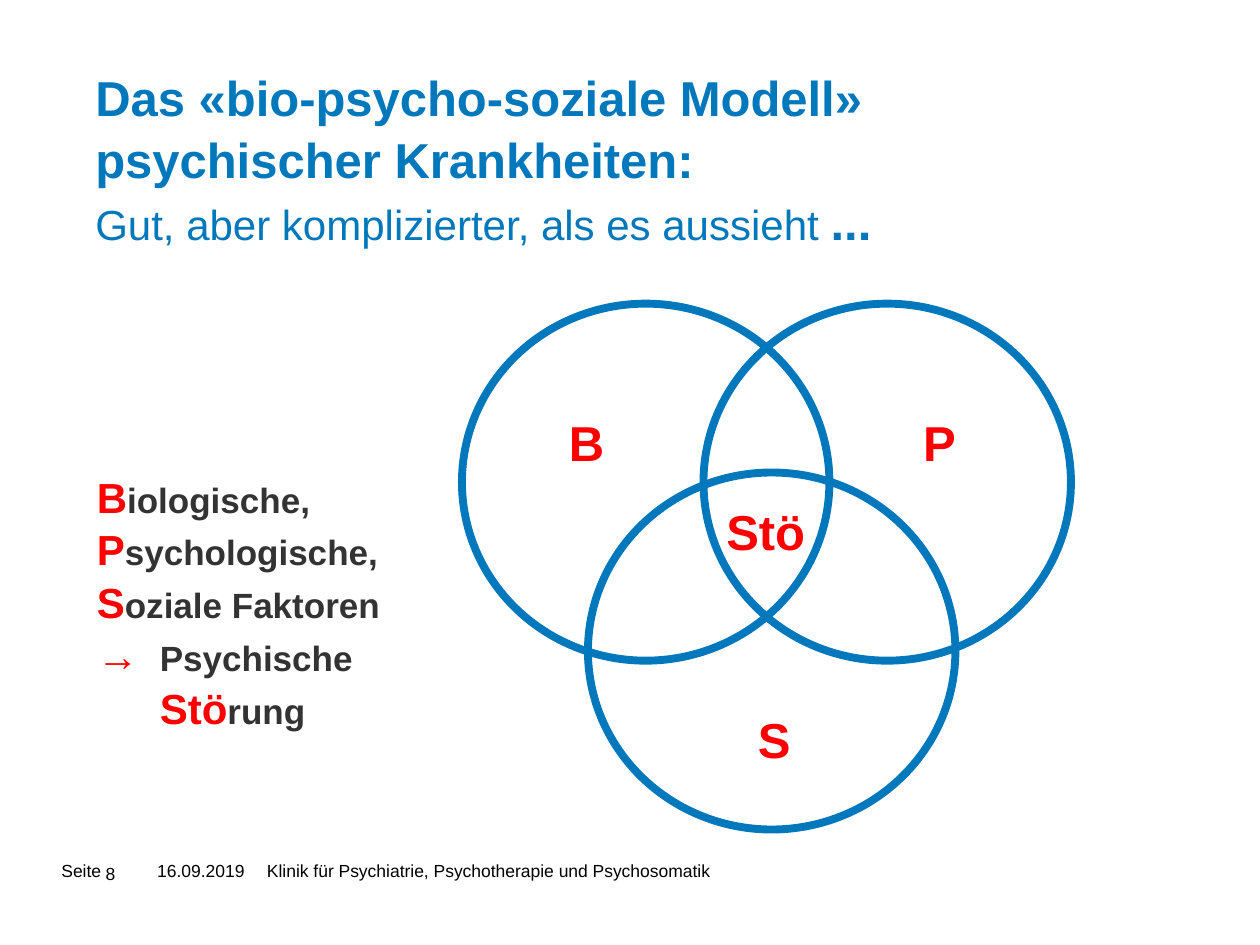
"""Build the slide on the bio-psycho-social model with its three overlapping circles."""
from pptx import Presentation
from pptx.dml.color import RGBColor
from pptx.enum.shapes import MSO_SHAPE
from pptx.enum.text import MSO_ANCHOR, PP_ALIGN
from pptx.util import Pt

OVAL = MSO_SHAPE.OVAL
MIDDLE = MSO_ANCHOR.MIDDLE
LEFT = PP_ALIGN.LEFT
BLUE, RED, GREY, BLACK = "0078BB", "FF0000", "333333", "000000"
LINE_SPACING = 1.05


def add_span(para, text, size=10, color=BLACK, bold=False):
    span = para.add_run()
    span.text = text
    span.font.name = "Arial"
    span.font.size = Pt(size)
    span.font.bold = bold
    span.font.color.rgb = RGBColor.from_string(color)


def add_box(left, top, width, height, wrap=True):
    box = page.shapes.add_textbox(Pt(left), Pt(top), Pt(width), Pt(height))
    box.text_frame.word_wrap = wrap
    return box.text_frame


deck = Presentation()
deck.slide_width, deck.slide_height = Pt(720), Pt(540)
page = deck.slides.add_slide(deck.slide_layouts[5])

title = page.shapes.title
title.left, title.top, title.width, title.height = Pt(34), Pt(29), Pt(484), Pt(119)
frame = title.text_frame
frame.word_wrap = True
frame.vertical_anchor = MIDDLE
frame.margin_left, frame.margin_top = Pt(20.5), Pt(6.5)
para = frame.paragraphs[0]
para.alignment = LEFT
para.line_spacing = LINE_SPACING
add_span(para, "Das «bio-psycho-soziale Modell» psychischer Krankheiten:", size=28, color=BLUE, bold=True)
para.add_line_break()
add_span(para, "Gut, aber komplizierter, als es aussieht ", size=24, color=BLUE)
add_span(para, "...", size=28, color=BLUE, bold=True)

for left, top in [(264, 173.5), (402, 173.5), (336, 270)]:
    circle = page.shapes.add_shape(OVAL, Pt(left), Pt(top), Pt(210), Pt(204))
    circle.shadow.inherit = False
    circle.fill.background()
    circle.line.color.rgb = RGBColor.from_string(BLUE)
    circle.line.width = Pt(4.5)

factors = add_box(48.25, 264.25, 228, 158)
rows = [("B", "iologische,"), ("P", "sychologische,"), ("S", "oziale Faktoren"), ("→", "\tPsychische")]
for index, (initial, rest) in enumerate(rows):
    para = factors.add_paragraph() if index else factors.paragraphs[0]
    para.line_spacing = LINE_SPACING
    indent = para._p.get_or_add_pPr()
    indent.set("marL", str(Pt(36)))
    indent.set("indent", str(Pt(-36)))
    add_span(para, initial, size=24, color=RED, bold=True)
    add_span(para, rest, size=20, color=GREY, bold=True)
para.add_line_break()
add_span(para, "Stö", size=24, color=RED, bold=True)
add_span(para, "rung", size=20, color=GREY, bold=True)

for text, left, top, width in [("B", 318, 230.5, 36), ("P", 520.5, 230.5, 36),
                               ("S", 426, 400.5, 36), ("Stö", 408, 281.5, 66)]:
    para = add_box(left, top, width, 41).paragraphs[0]
    para.line_spacing = LINE_SPACING
    add_span(para, text, size=28, color=RED, bold=True)

for text, left, top, width in [("Seite", 28, 488, 38), ("8", 53.25, 489.5, 34), ("16.09.2019", 82.75, 488, 65),
                               ("Klinik für Psychiatrie, Psychotherapie und Psychosomatik", 145.5, 488, 440)]:
    add_span(add_box(left, top, width, 19, wrap=False).paragraphs[0], text)

deck.save("out.pptx")
